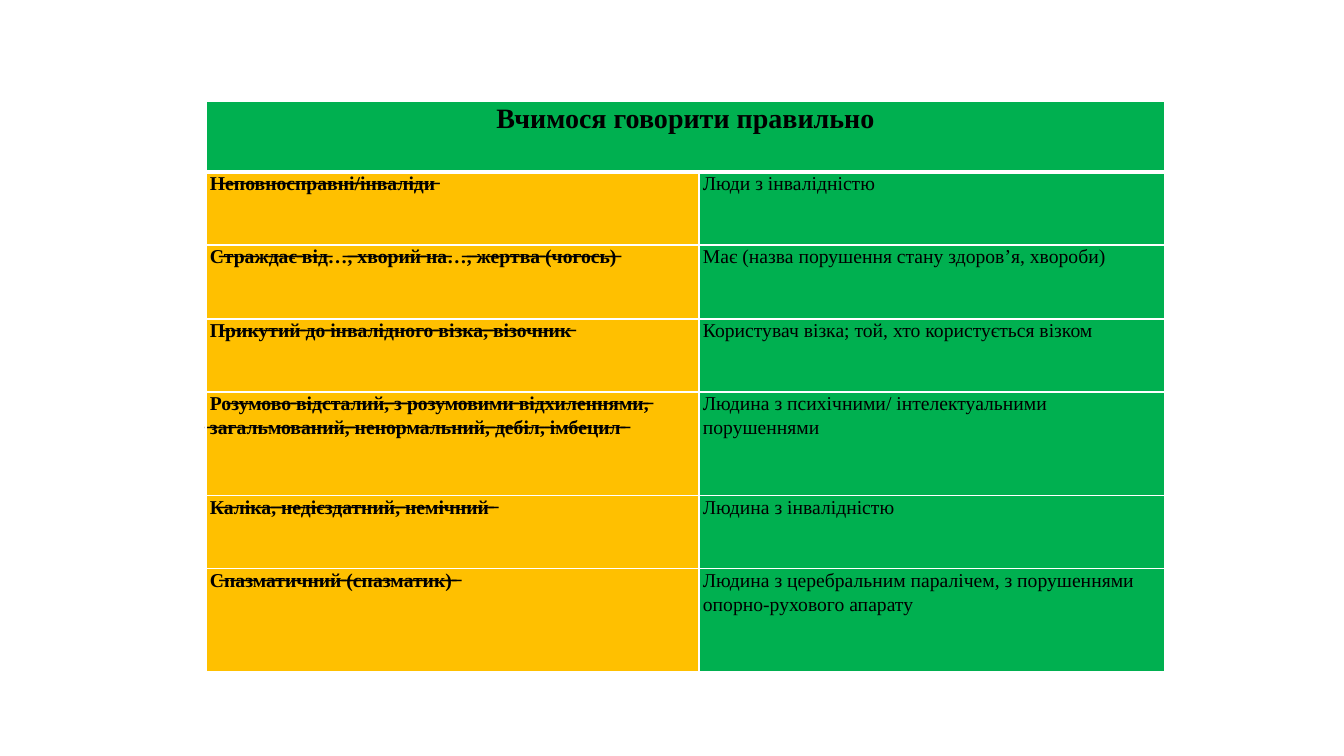
from lxml.etree import SubElement
from pptx import Presentation
from pptx.dml.color import RGBColor
from pptx.enum.text import MSO_ANCHOR as Anchor, PP_ALIGN as Align
from pptx.oxml.ns import qn
from pptx.util import Emu, Pt

EMU_PER_PX = 914400 / 100.8
GREEN, AMBER, WHITE, BLACK = "00B050", "FFC000", "FFFFFF", "000000"
STROKE = "̶"


def px(length):
    return Emu(round(length * EMU_PER_PX))


def colour(hex_string):
    return RGBColor.from_string(hex_string)


def strike(words):
    return "".join(letter + STROKE for letter in words)


def write_text(frame, words, size=14, bold=False, align=Align.LEFT,
               font="Times New Roman", ink=BLACK):
    paragraph = frame.paragraphs[0]
    paragraph.alignment = align
    paragraph.line_spacing = 1.07
    paragraph.space_after = Pt(8)
    run = paragraph.add_run()
    run.text = words
    run.font.name = font
    run.font.size = Pt(size)
    run.font.bold = bold
    run.font.color.rgb = colour(ink)


class Deck:
    def __init__(self, width, height):
        self.presentation = Presentation()
        self.presentation.slide_width = px(width)
        self.presentation.slide_height = px(height)
        self.slide = None

    def add_slide(self):
        blank = self.presentation.slide_layouts[6]
        self.slide = self.presentation.slides.add_slide(blank)

    def table(self, left, top, widths, heights):
        grid = self.slide.shapes.add_table(
            len(heights), len(widths), px(left), px(top),
            px(sum(widths)), px(sum(heights))).table
        grid.horz_banding = False
        for column, width in zip(grid.columns, widths):
            column.width = px(width)
        for row, height in zip(grid.rows, heights):
            row.height = px(height)
        return grid

    def borders(self, cell, top=1, bottom=1):
        properties = cell._tc.get_or_add_tcPr()
        edges = {"a:lnL": 1, "a:lnR": 1, "a:lnT": top, "a:lnB": bottom}
        for edge, points in edges.items():
            line = SubElement(properties, qn(edge), w=str(Pt(points)))
            fill = SubElement(line, qn("a:solidFill"))
            SubElement(fill, qn("a:srgbClr"), val=WHITE)

    def cell(self, cell, words, fill, top=1, bottom=1, **text_format):
        self.borders(cell, top, bottom)
        cell.fill.solid()
        cell.fill.fore_color.rgb = colour(fill)
        cell.margin_left = cell.margin_right = px(4)
        cell.margin_top = cell.margin_bottom = 0
        cell.vertical_anchor = Anchor.TOP
        write_text(cell.text_frame, words, **text_format)

    def save(self):
        self.presentation.save("out.pptx")


PHRASES = [
    (strike("Неповносправні/інваліди"), "Люди з інвалідністю"),
    (strike("Страждає від…, хворий на…, жертва (чогось)"),
     "Має (назва порушення стану здоров’я, хвороби)"),
    (strike("Прикутий до інвалідного візка, візочник"),
     "Користувач візка; той, хто користується візком"),
    ("Р" + strike("озумово відсталий, з розумовими відхиленнями, "
                  "загальмований, ненормальний, дебіл, імбецил "),
     "Людина з психічними/ інтелектуальними порушеннями"),
    (strike("Каліка, недієздатний, немічний "), "Людина з інвалідністю"),
    (strike("Спазматичний (спазматик) "),
     "Людина з церебральним паралічем, з порушеннями опорно-рухового апарату"),
]


def main():
    deck = Deck(1344, 756)
    deck.add_slide()
    glossary = deck.table(206, 101, widths=[493, 466],
                          heights=[71, 73, 74, 73, 104, 73, 103])

    heading = glossary.cell(0, 0)
    heading.merge(glossary.cell(0, 1))
    deck.cell(heading, "Вчимося говорити правильно", GREEN, bottom=3,
              size=20, bold=True, align=Align.CENTER)

    for row, (wrong, right) in enumerate(PHRASES, start=1):
        top = 3 if row == 1 else 1
        deck.cell(glossary.cell(row, 0), wrong, AMBER, top=top, bold=True)
        deck.cell(glossary.cell(row, 1), right, GREEN, top=top)

    deck.save()


if __name__ == "__main__":
    main()
